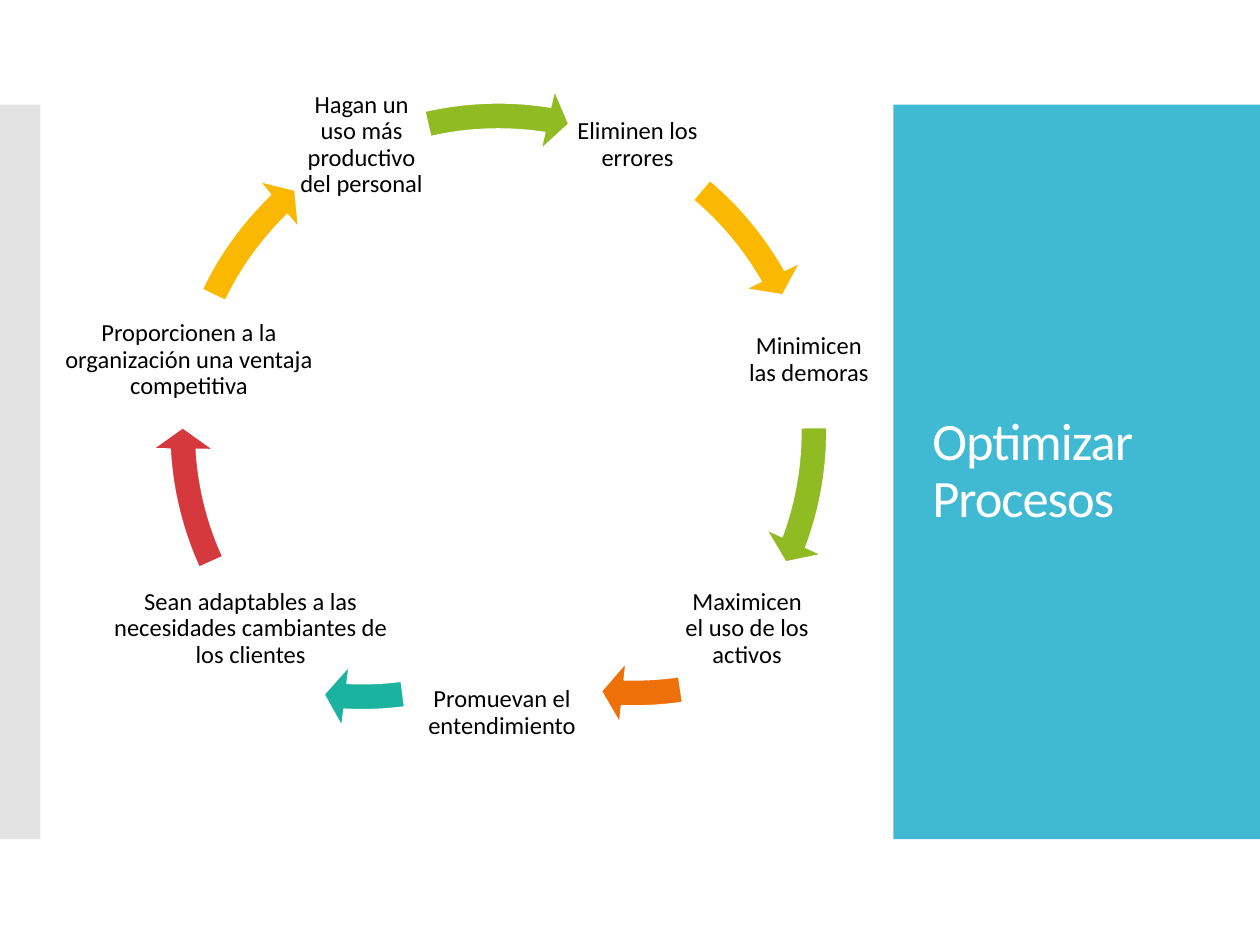
import pptx
import pptx.dml.color
import pptx.enum.shapes
import pptx.enum.text
import pptx.oxml
import pptx.oxml.ns
import pptx.util
from pptx.util import Inches

MSO_SHAPE = pptx.enum.shapes.MSO_SHAPE
ALIGN = pptx.enum.text.PP_ALIGN
ANCHOR = pptx.enum.text.MSO_ANCHOR
AUTO_SIZE = pptx.enum.text.MSO_AUTO_SIZE

LABEL_TOPS = {"upper": 0.62, "middle": 2.33, "lower": 4.46, "bottom": 5.13}
LABELS = [
    ("Eliminen los errores", 4.53, "upper", 1.06),
    ("Minimicen las demoras", 5.89, "middle", 1.06),
    ("Maximicen el uso de los activos", 5.4, "lower", 1.06),
    ("Promuevan el entendimiento", 3.2, "bottom", 1.57),
    ("Sean adaptables a las necesidades cambiantes de los clientes", 0.86, "lower", 2.26),
    ("Proporcionen a la organización una ventaja competitiva", 0.45, "middle", 2.1),
    ("Hagan un uso más productivo del personal", 2.34, "upper", 1.06),
]
RING = (1.21, 0.68)
ARROWS = [
    (RING, 310.1, 330.44, "FAB900"),
    (RING, 359.3, 20.5, "90BB23"),
    ((2.29, 0.25), 81.58, 92.1, "EE7008"),
    ((0.13, 0.28), 82.59, 93.04, "1AB39F"),
    (RING, 155.59, 176.79, "D5393D"),
    (RING, 205.64, 225.99, "FAB900"),
    (RING, 257.08, 279.01, "90BB23"),
]


def rgb(value):
    return pptx.dml.color.RGBColor.from_string(value)


def apply(target, values):
    for name, value in values.items():
        setattr(target, name, value)


class SlideBuilder:
    font = "Calibri"
    label_height = 1.06
    label_margin = 0.02
    ring_size = 5.49
    degree = 0.6

    def __init__(self, prs):
        self.s = prs.slides.add_slide(prs.slide_layouts[5])

    def place(self, sp, left, top, width, height):
        apply(sp, {"left": Inches(left), "top": Inches(top),
                   "width": Inches(width), "height": Inches(height)})

    def set_text(self, tf, text, size, color, align):
        apply(tf, {"word_wrap": True, "auto_size": AUTO_SIZE.NONE,
                   "vertical_anchor": ANCHOR.MIDDLE})
        p = tf.paragraphs[0]
        apply(p, {"alignment": align, "line_spacing": 0.9})
        r = p.add_run()
        r.text = text
        apply(r.font, {"name": self.font, "size": pptx.util.Pt(size)})
        r.font.color.rgb = rgb(color)
        return r

    def shape(self, kind, left, top, width, height, color):
        sp = self.s.shapes.add_shape(
            kind, Inches(left), Inches(top), Inches(width), Inches(height))
        sp.shadow.inherit = False
        sp.fill.solid()
        sp.fill.fore_color.rgb = rgb(color)
        return sp

    def panel(self, left, width, color, opacity=100):
        sp = self.shape(MSO_SHAPE.RECTANGLE, left, 0.83, width, 5.83, color)
        sp.line.fill.background()
        if opacity < 100:
            clr = sp._element.spPr.find(".//" + pptx.oxml.ns.qn("a:srgbClr"))
            alpha = pptx.oxml.parse_xml(
                f'<a:alpha {pptx.oxml.ns.nsdecls("a")} val="{opacity * 1000}"/>')
            clr.append(alpha)

    def title(self, text):
        sp = self.s.shapes.title
        self.s.shapes._spTree.append(sp._element)
        self.place(sp, 7.3, 1.23, 2.42, 5.03)
        r = self.set_text(sp.text_frame, text, 30, "FFFFFF", ALIGN.LEFT)
        r._r.get_or_add_rPr().set("spc", "-60")

    def label(self, text, left, row, width):
        sp = self.s.shapes.add_textbox(0, 0, 0, 0)
        self.place(sp, left, LABEL_TOPS[row], width, self.label_height)
        tf = sp.text_frame
        apply(tf, {f"margin_{side}": Inches(self.label_margin)
                   for side in ("left", "top", "right", "bottom")})
        self.set_text(tf, text, 14, "000000", ALIGN.CENTER)

    def arrow(self, corner, start, end, color):
        sp = self.shape(MSO_SHAPE.CIRCULAR_ARROW, *corner,
                        self.ring_size, self.ring_size, color)
        sp.line.color.rgb = rgb("FFFFFF")
        sp.line.width = pptx.util.Pt(0.85)
        values = (3.76 / 100, 3.91 * self.degree, end * self.degree,
                  start * self.degree, 4.38 / 100)
        for i, value in enumerate(values):
            sp.adjustments[i] = value


def main():
    prs = pptx.Presentation()
    apply(prs, {"slide_width": Inches(10), "slide_height": Inches(7.5)})
    slide = SlideBuilder(prs)
    slide.panel(7.09, 2.91, "40BAD2")
    slide.title("Optimizar Procesos")
    slide.panel(0, 0.32, "C8C8C8", opacity=50)
    for label, arrow in zip(LABELS, ARROWS):
        slide.label(*label)
        slide.arrow(*arrow)
    prs.save("out.pptx")


if __name__ == "__main__":
    main()
